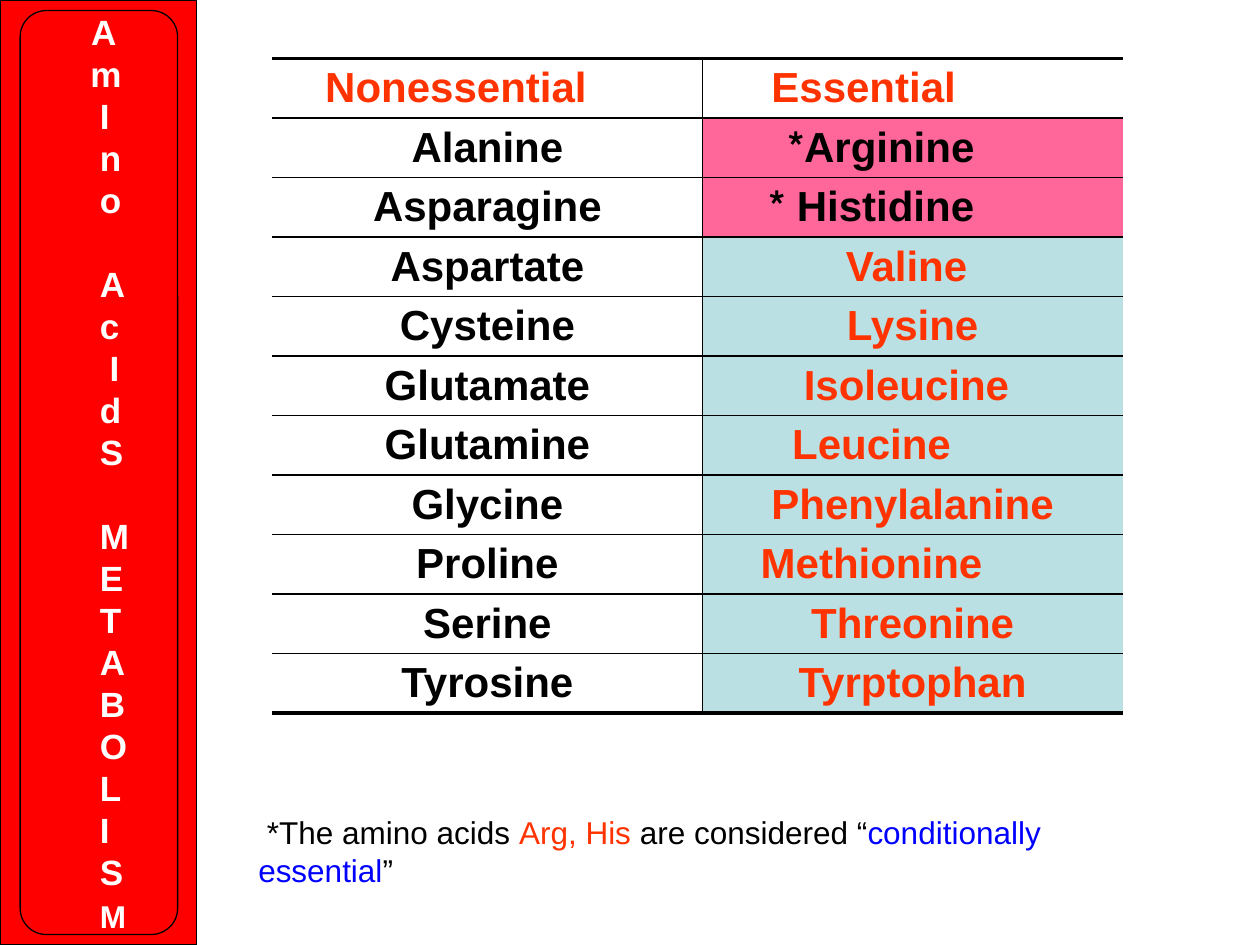
from dataclasses import dataclass

from lxml import etree
from pptx import Presentation
from pptx.dml.color import RGBColor
from pptx.enum.shapes import MSO_SHAPE
from pptx.enum.text import MSO_ANCHOR, PP_ALIGN
from pptx.oxml.ns import qn
from pptx.util import Pt

RECT, ROUND = MSO_SHAPE.RECTANGLE, MSO_SHAPE.ROUNDED_RECTANGLE
MIDDLE = MSO_ANCHOR.MIDDLE
LEFT, CENTER = PP_ALIGN.LEFT, PP_ALIGN.CENTER


@dataclass(frozen=True)
class Theme:
    """Colours, font and type sizes of the slide."""
    font: str = "Arial"
    black: str = "000000"
    white: str = "FFFFFF"
    red: str = "FF0000"
    orange: str = "FF3300"
    blue: str = "0000FF"
    pink: str = "FF6699"
    teal: str = "BBE0E3"
    cell: int = 24
    banner: int = 20
    note: int = 18
    thin: float = 1
    thick: float = 2.25


T = Theme()
WORDS = ["AmIno", "AcIdS", "METABOLISM"]
LETTER_INDENTS = {(0, 0): 45, (0, 1): 44.5, (1, 2): 55.5}
ROWS = [
    ("Nonessential", 36, "Essential", 56),
    ("Alanine", 0, "Arginine*", 36),
    ("Asparagine", 0, "Histidine *", 47),
    ("Aspartate", 0, "Valine", 7),
    ("Cysteine", 0, "Lysine", 0),
    ("Glutamate", 0, "Isoleucine", 7),
    ("Glutamine", 0, "Leucine", 47),
    ("Glycine", 0, "Phenylalanine", 0),
    ("Proline", 0, "Methionine", 47),
    ("Serine", 0, "Threonine", 0),
    ("Tyrosine", 0, "Tyrptophan", 0),
]
NOTE = [
    ("*The amino acids ", T.black),
    ("Arg, His ", T.orange),
    ("are considered “", T.black),
    ("conditionally essential", T.blue),
    ("”", T.black),
]


def add_run(p, text, size, color, bold=False):
    """Add a formatted run to a paragraph."""
    r = p.add_run()
    r.text = text
    for name, value in dict(name=T.font, size=Pt(size), bold=bold).items():
        setattr(r.font, name, value)
    r.font.color.rgb = RGBColor.from_string(color)


def set_paragraph(p, indent=0, first=0, **attrs):
    """Set the margin and first-line indent, then further attributes."""
    pPr = p._p.get_or_add_pPr()
    pPr.set("marL", str(Pt(indent)))
    pPr.set("indent", str(Pt(first)))
    for name, value in attrs.items():
        setattr(p, name, value)


def add_panel(s, kind, box, fill=None):
    """Add an outlined shape, filled when a colour is given."""
    sp = s.shapes.add_shape(kind, *map(Pt, box))
    sp.shadow.inherit = False
    if fill:
        sp.fill.solid()
        sp.fill.fore_color.rgb = RGBColor.from_string(fill)
    else:
        sp.fill.background()
    sp.line.color.rgb = RGBColor.from_string(T.black)
    sp.line.width = Pt(0.75)
    return sp


def add_banner(s, x, y, w, h):
    """Place the side banner with its letters stacked downwards."""
    tf = add_panel(s, RECT, (x, y, w, h), T.red).text_frame
    tf.word_wrap = True
    tf.vertical_anchor = MIDDLE
    letters = [(i, j, c) for i, word in enumerate(WORDS) for j, c in enumerate(word)]
    for n, (i, j, letter) in enumerate(letters):
        p = tf.add_paragraph() if n else tf.paragraphs[0]
        gap = 24 if i and j == 0 else 0
        set_paragraph(p, LETTER_INDENTS.get((i, j), 50), alignment=LEFT,
                      line_spacing=Pt(24), space_before=Pt(gap))
        size = T.note if n == len(letters) - 1 else T.banner
        add_run(p, letter, size, T.white, True)
    add_panel(s, ROUND, (x + 11.5, y + 6, w - 22.5, h - 12))


def set_borders(cell, **widths):
    """Draw the cell edges that have a width and hide the others."""
    tcPr = cell._tc.get_or_add_tcPr()
    for side in "LRTB":
        width = widths.get(side, 0)
        ln = etree.SubElement(tcPr, qn("a:ln" + side), w=str(Pt(width)))
        if width:
            fill = etree.SubElement(ln, qn("a:solidFill"))
            etree.SubElement(fill, qn("a:srgbClr"), val=T.black)
        else:
            etree.SubElement(ln, qn("a:noFill"))


def fill_cell(cell, text, indent, color, fill):
    """Write one centred right-to-left name and colour its cell."""
    margins = dict(margin_top=Pt(3), margin_bottom=Pt(3), vertical_anchor=MIDDLE)
    for name, value in margins.items():
        setattr(cell, name, value)
    p = cell.text_frame.paragraphs[0]
    set_paragraph(p, indent, alignment=CENTER)
    p._p.get_or_add_pPr().set("rtl", "1")
    add_run(p, text, T.cell, color, True)
    if fill:
        cell.fill.solid()
        cell.fill.fore_color.rgb = RGBColor.from_string(fill)
    else:
        cell.fill.background()


def add_acid_table(s, x, y, w, h):
    """Place the table of nonessential and essential amino acids."""
    last = len(ROWS) - 1
    table = s.shapes.add_table(len(ROWS), 2, *map(Pt, (x, y, w, h))).table
    table.first_row = table.horz_banding = False
    table.columns[0].width, table.columns[1].width = Pt(246), Pt(w - 246)
    for i, (left, left_indent, right, right_indent) in enumerate(ROWS):
        table.rows[i].height = Pt(h / len(ROWS))
        edges = dict(T=T.thin if i else T.thick, B=T.thick if i == last else T.thin)
        a, b = table.cell(i, 0), table.cell(i, 1)
        set_borders(a, R=T.thin, **edges)
        set_borders(b, L=T.thin, **edges)
        starred = right.endswith("*")
        fill = (T.pink if starred else T.teal) if i else None
        fill_cell(a, left, left_indent, T.black if i else T.orange, None)
        fill_cell(b, right, right_indent, T.black if starred else T.orange, fill)


def add_note(s, x, y, w, h):
    """Place the footnote below the table."""
    tf = s.shapes.add_textbox(*map(Pt, (x, y, w, h))).text_frame
    tf.word_wrap = True
    p = tf.paragraphs[0]
    set_paragraph(p, first=5, line_spacing=Pt(21.6))
    for text, color in NOTE:
        add_run(p, text, T.note, color)


def main():
    """Build the slide and save it."""
    prs = Presentation()
    prs.slide_width, prs.slide_height = Pt(720), Pt(540)
    s = prs.slides.add_slide(prs.slide_layouts[6])
    add_banner(s, 0, 0, 112.5, 540)
    add_acid_table(s, 155.5, 33.5, 486, 374)
    add_note(s, 140.5, 461, 540, 50)
    prs.save("out.pptx")


if __name__ == "__main__":
    main()
